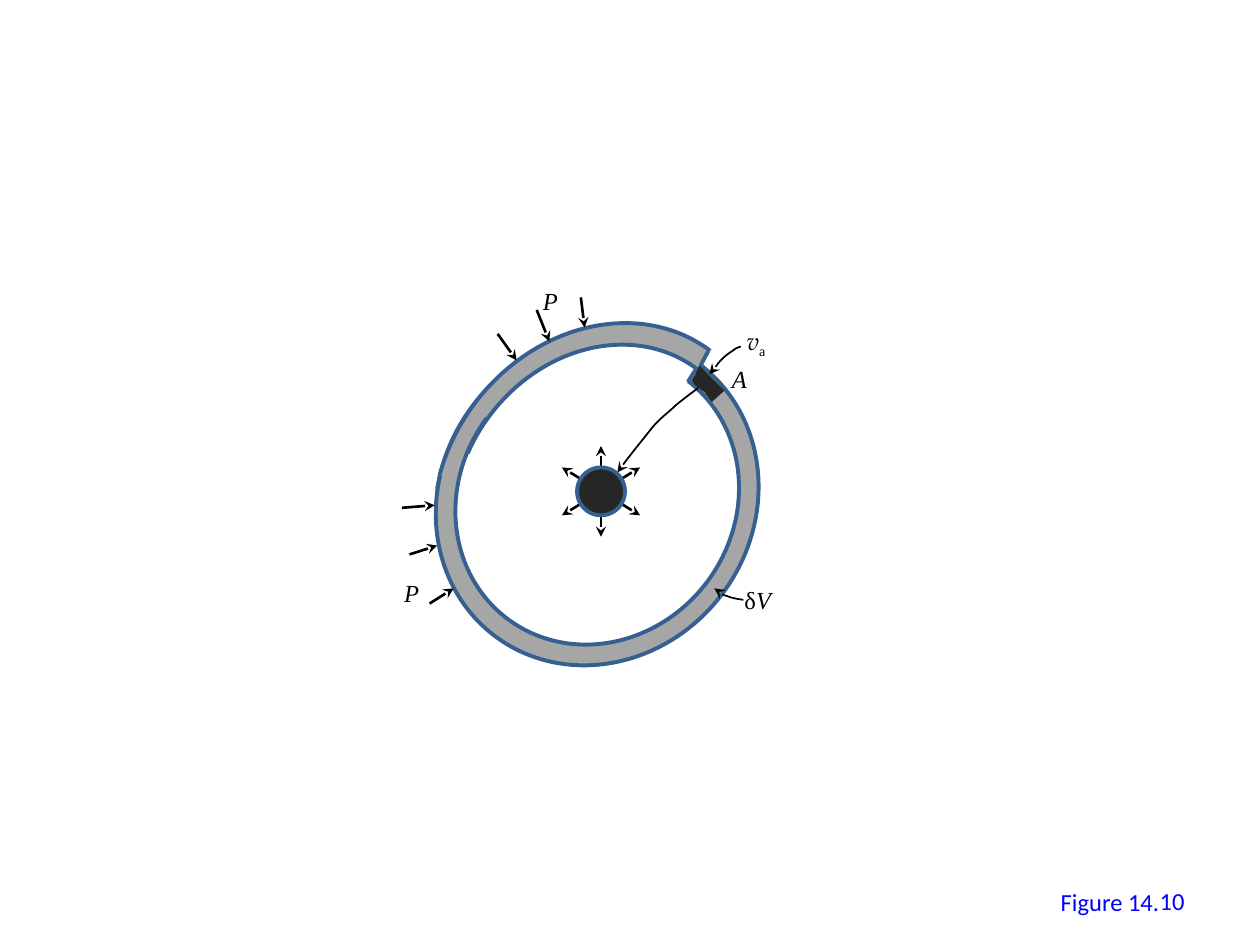
from lxml.etree import SubElement
from pptx import Presentation
from pptx.dml.color import RGBColor
from pptx.enum.shapes import MSO_CONNECTOR as Link, MSO_SHAPE as Shape
from pptx.enum.text import MSO_ANCHOR as Anchor, MSO_AUTO_SIZE as Fit, PP_ALIGN as Align
from pptx.oxml.ns import qn
from pptx.util import Inches, Pt

THEME = {
    "edge": "376092", "shell": "A6A6A6", "hole": "FFFFFF", "dark": "262626",
    "ink": "000000", "blue": "0000FF",
    "size": 14, "thick": 2.25, "mid": 1.5, "thin": 1,
    "sans": "Calibri", "serif": "Times New Roman", "math": "TeX Gyre Pagella",
}
TILT = 37.1

# Each ring: fill, arcs as (box, start and end degrees), line that closes the step
RINGS = [
    ("shell", [((3.5, 2.62, 2.48, 2.7), (269.59, 196.81)),
               ((3.52, 2.49, 2.48, 2.91), (150.43, 269.97))],
     ((5.62, 2.79), (5.56, 2.9))),
    ("hole", [((3.65, 2.78, 2.18, 2.37), (269.59, 179.31)),
              ((3.67, 2.67, 2.18, 2.56), (161.41, 269.97))],
     ((5.53, 2.92), (5.46, 3.03))),
]
SEAM = ((3.49, 3.78), (3.47, 3.88))
PUSHES = [
    ((3.41, 4.79), (3.6, 4.67)), ((3.25, 4.4), (3.47, 4.33)),
    ((3.19, 4.03), (3.45, 4.01)), ((3.95, 2.65), (4.1, 2.86)),
    ((4.26, 2.46), (4.36, 2.71)), ((4.61, 2.36), (4.64, 2.6)),
]
# Start point, then three points for each curve
LEADS = [
    [(5.63, 2.97), (5.67, 2.93), (5.7, 2.88), (5.73, 2.85), (5.76, 2.82),
     (5.79, 2.8), (5.82, 2.78), (5.84, 2.76), (5.88, 2.75), (5.88, 2.75)],
    [(5.67, 4.67), (5.7, 4.69), (5.73, 4.72), (5.77, 4.73), (5.81, 4.75),
     (5.9, 4.76), (5.9, 4.76)],
    [(4.9, 3.75), (5, 3.61), (5.11, 3.48), (5.18, 3.39), (5.26, 3.3),
     (5.3, 3.28), (5.36, 3.22), (5.42, 3.17), (5.54, 3.08), (5.54, 3.08)],
]
PATCH = [(5.55, 2.9), (5.62, 2.97), (5.7, 3.05), (5.75, 3.1), (5.65, 3.19),
         (5.59, 3.11), (5.52, 3.06), (5.49, 3.02), (5.52, 2.97)]
CORE = (4.77, 3.9)
RADIUS = 0.19
REACH = [(0.31, 0.19), (0, 0.36), (0.31, -0.19)]

# Runs: text, font, italic, subscript
P = [("P", "serif", True, False)]
LABELS = [
    ((5.71, 2.84, 0.37, 0.34), [("A", "serif", True, False)]),
    ((3.11, 4.54, 0.37, 0.34), P),
    ((4.21, 2.22, 0.37, 0.34), P),
    ((5.81, 4.59, 0.48, 0.34), [("δ", "serif", False, False), ("V", "serif", True, False)]),
    ((5.83, 2.54, 0.4, 0.34), [("v", "math", True, False), ("a", "serif", False, True)]),
]
CAPTION = ((8.32, 6.99, 0.99, 0.34), [("Figure 14.", "sans", False, False)])
NUMBER = ((7.17, 6.95, 2.33, 0.4), [("10", "sans", False, False)])


def color(name):
    return RGBColor.from_string(THEME[name])


def spots(points):
    return [(Inches(x), Inches(y)) for x, y in points]


def stroke(shape, tint, width, *ends):
    """Set the line; ends are headEnd and tailEnd, where arrowheads go."""
    shape.line.color.rgb = color(tint)
    shape.line.width = Pt(THEME[width])
    for end in ends:
        SubElement(shape.line._get_or_add_ln(), qn("a:" + end), type="stealth")


def paint(shape, tint):
    shape.shadow.inherit = False
    shape.fill.solid()
    shape.fill.fore_color.rgb = color(tint)


def add_line(home, ends, tint, width, *heads):
    (x1, y1), (x2, y2) = spots(ends)
    line = home.add_connector(Link.STRAIGHT, x1, y1, x2, y2)
    stroke(line, tint, width, *heads)
    SubElement(line._element.spPr, qn("a:effectLst"))


def add_ring(home, tint, arcs, step):
    for box, angles in arcs:
        arc = home.add_shape(Shape.ARC, *map(Inches, box))
        for i, angle in enumerate(angles):
            arc.adjustments[i] = angle * 0.6  # 60000ths of a degree over 100000
        arc.rotation = TILT
        paint(arc, tint)
        stroke(arc, "edge", "thick")
    add_line(home, step, "edge", "thick")


def add_free(home, points, close):
    first, *rest = spots(points)
    pen = home.build_freeform(*first, scale=1)
    pen.add_line_segments(rest, close=close)
    return pen.convert_to_shape()


def add_lead(home, points):
    curve = add_free(home, points, False)
    curve.shadow.inherit = False
    curve.fill.background()
    stroke(curve, "ink", "thin", "headEnd")
    legs = list(curve._element.iter(qn("a:lnTo")))
    route = legs[0].getparent()
    for i in range(0, len(legs), 3):
        bend = SubElement(route, qn("a:cubicBezTo"))
        for leg in legs[i:i + 3]:
            bend.append(leg[0])
            route.remove(leg)


def add_text(home, box, runs, tint):
    text = home.add_textbox(*map(Inches, box))
    frame = text.text_frame
    frame.word_wrap = False
    frame.auto_size = Fit.SHAPE_TO_FIT_TEXT
    for words, face, slant, sub in runs:
        run = frame.paragraphs[0].add_run()
        run.text = words
        font = run.font
        font.name, font.size, font.italic = THEME[face], Pt(THEME["size"]), slant
        font.color.rgb = color(tint)
        if sub:
            font._element.set("baseline", "-25000")
    return frame


def add_core(home):
    x, y = CORE
    for dx, dy in REACH:
        ends = ((x + dx, y + dy), (x - dx, y - dy))
        add_line(home, ends, "ink", "mid", "headEnd", "tailEnd")
    box = (x - RADIUS, y - RADIUS, 2 * RADIUS, 2 * RADIUS)
    disc = home.add_shape(Shape.OVAL, *map(Inches, box))
    paint(disc, "dark")
    stroke(disc, "edge", "thick")


def main():
    deck = Presentation()
    deck.slide_width, deck.slide_height = Inches(10), Inches(7.5)
    shapes = deck.slides.add_slide(deck.slide_layouts[6]).shapes

    add_text(shapes, *CAPTION, "blue")
    for ring in RINGS:
        add_ring(shapes.add_group_shape().shapes, *ring)
    for push in PUSHES:
        add_line(shapes, push, "ink", "mid", "tailEnd")
    for label in LABELS:
        add_text(shapes, *label, "ink")
    for lead in LEADS:
        add_lead(shapes, lead)
    patch = add_free(shapes, PATCH, True)
    paint(patch, "dark")
    patch.line.fill.background()
    add_line(shapes, SEAM, "edge", "thick")
    add_core(shapes.add_group_shape().shapes)

    frame = add_text(shapes, *NUMBER, "blue")
    frame.word_wrap = True
    frame.auto_size = Fit.NONE
    frame.vertical_anchor = Anchor.MIDDLE
    frame.paragraphs[0].alignment = Align.RIGHT
    deck.save("out.pptx")


if __name__ == "__main__":
    main()
